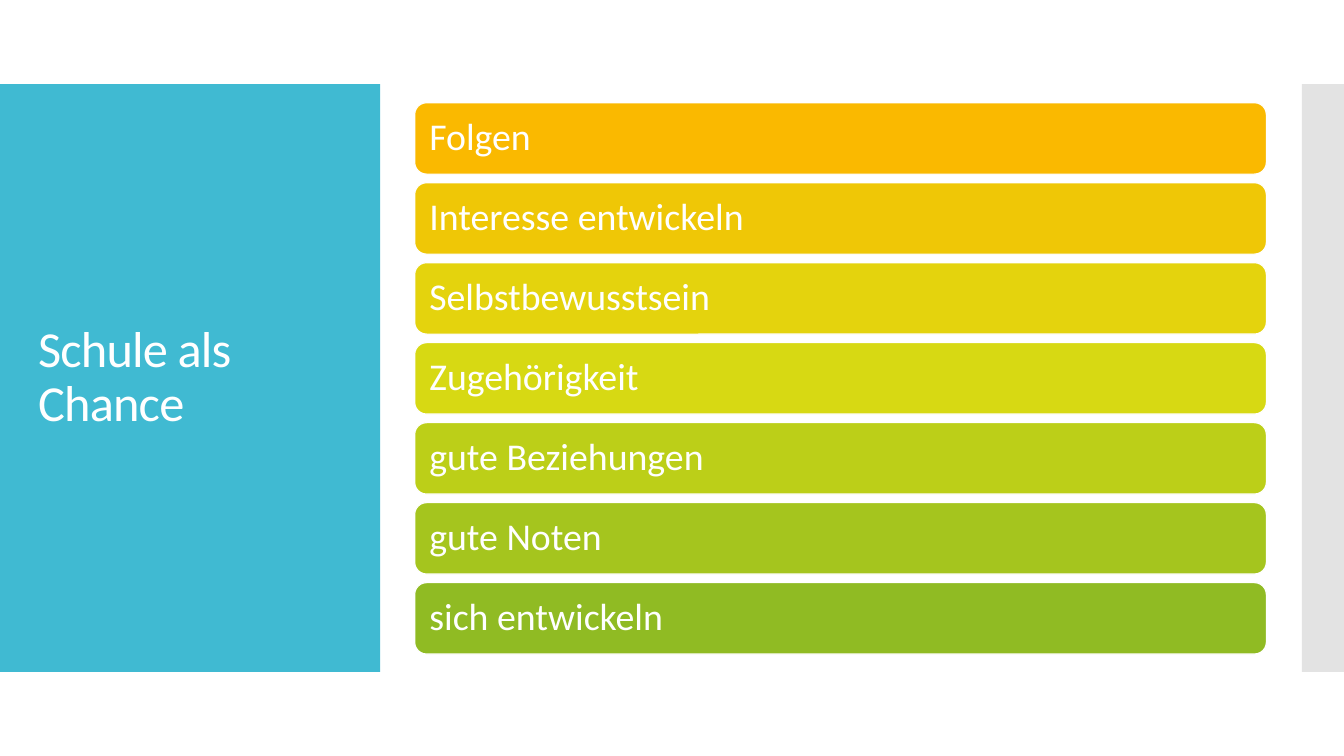
from pptx import Presentation
from pptx.dml.color import RGBColor
from pptx.enum.shapes import MSO_SHAPE
from pptx.enum.text import MSO_ANCHOR, MSO_AUTO_SIZE, PP_ALIGN
from pptx.oxml.ns import qn
from pptx.util import Pt
from lxml.etree import SubElement

WHITE = RGBColor(0xFF, 0xFF, 0xFF)
PANEL_BLUE = RGBColor(0x40, 0xBA, 0xD2)
STRIP_GREY = RGBColor(0xC8, 0xC8, 0xC8)
FONT = "Calibri"

TITLE = "Schule als Chance"
CHANCES = [
    ("Folgen", RGBColor(0xFA, 0xB9, 0x00)),
    ("Interesse entwickeln", RGBColor(0xEF, 0xC7, 0x06)),
    ("Selbstbewusstsein", RGBColor(0xE4, 0xD3, 0x0D)),
    ("Zugehörigkeit", RGBColor(0xD7, 0xD9, 0x13)),
    ("gute Beziehungen", RGBColor(0xBC, 0xCF, 0x18)),
    ("gute Noten", RGBColor(0xA5, 0xC5, 0x1E)),
    ("sich entwickeln", RGBColor(0x90, 0xBB, 0x23)),
]


def set_attributes(target, values):
    for name, value in values.items():
        setattr(target, name, value)


def write_text(shape, text, size, inset):
    """Write one left-aligned, vertically centred white paragraph."""
    frame = shape.text_frame
    frame.text = text
    set_attributes(frame, {
        "word_wrap": True, "auto_size": MSO_AUTO_SIZE.NONE,
        "vertical_anchor": MSO_ANCHOR.MIDDLE,
        "margin_left": Pt(inset), "margin_right": Pt(inset),
        "margin_top": Pt(0), "margin_bottom": Pt(0),
    })
    paragraph = frame.paragraphs[0]
    set_attributes(paragraph, {"alignment": PP_ALIGN.LEFT, "line_spacing": 0.9})
    font = paragraph.runs[0].font
    set_attributes(font, {"name": FONT, "size": Pt(size)})
    font.color.rgb = WHITE
    return paragraph.runs[0]


def add_filled_shape(slide, kind, left, top, width, height, color):
    shape = slide.shapes.add_shape(kind, Pt(left), Pt(top), Pt(width), Pt(height))
    shape.shadow.inherit = False
    shape.fill.solid()
    shape.fill.fore_color.rgb = color
    shape.line.fill.background()
    return shape


def add_title_panel(slide, left, top, width, height):
    title = slide.shapes.title
    panel = add_filled_shape(slide, MSO_SHAPE.RECTANGLE, left, top, width, height, PANEL_BLUE)
    title.element.addprevious(panel.element)  # panel goes behind the title
    set_attributes(title, {
        "left": Pt(left + 20), "top": Pt(top + 28.8),
        "width": Pt(width - 39.5), "height": Pt(height - 57.6),
    })
    run = write_text(title, TITLE, 36, 7.2)
    run.font.element.set("spc", "-60") if hasattr(run.font, "element") else \
        run.element.get_or_add_rPr().set("spc", "-60") if hasattr(run, "element") else \
        run._r.get_or_add_rPr().set("spc", "-60")


def add_edge_strip(slide, left, top, width, height):
    strip = add_filled_shape(slide, MSO_SHAPE.RECTANGLE, left, top, width, height, STRIP_GREY)
    color = strip.element.spPr.find(qn("a:solidFill")).find(qn("a:srgbClr"))
    SubElement(color, qn("a:alpha")).set("val", "50000")


def add_chance_list(slide, left, top, width, height):
    gap = 6.1
    bar_height = (height + gap) / len(CHANCES) - gap
    for index, (text, color) in enumerate(CHANCES):
        bar_top = top + index * (bar_height + gap)
        bar = add_filled_shape(slide, MSO_SHAPE.ROUNDED_RECTANGLE,
                               left, bar_top, width, bar_height, color)
        bar.line.color.rgb = WHITE
        bar.line.width = Pt(0.85)
        write_text(bar, text, 27, 8)


def main():
    presentation = Presentation()
    set_attributes(presentation, {"slide_width": Pt(960), "slide_height": Pt(540)})
    slide = presentation.slides.add_slide(presentation.slide_layouts[5])

    # Left panel with title, right edge strip, list of coloured bars
    add_title_panel(slide, 0, 60, 271.5, 420)
    add_edge_strip(slide, 930, 60, 30, 420)
    add_chance_list(slide, 296.2, 73.4, 608.4, 393.8)

    presentation.save("out.pptx")


if __name__ == "__main__":
    main()
